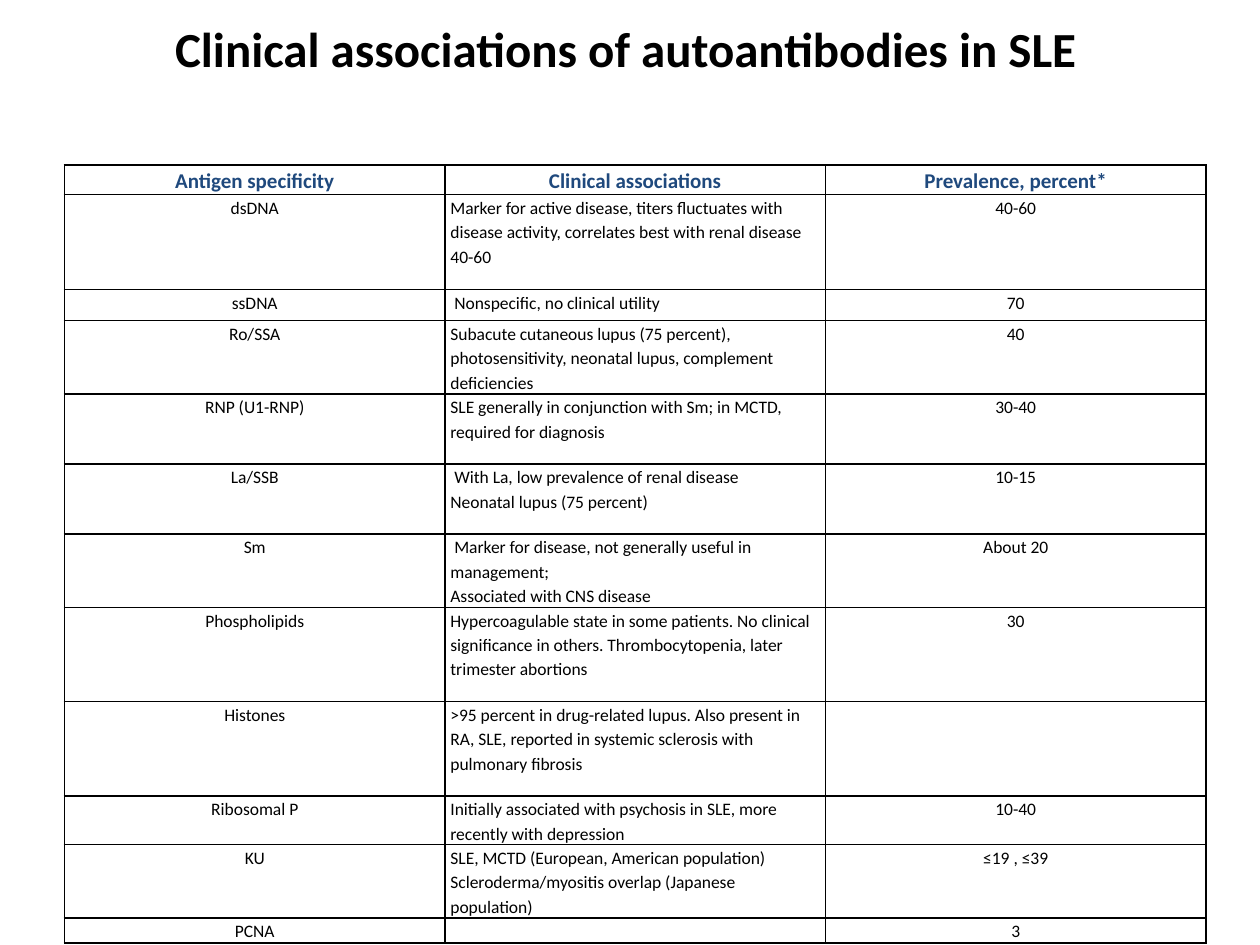
import pptx
import pptx.util
import pptx.dml.color
import pptx.enum.text
import pptx.oxml.ns
from lxml import etree

Cm, Pt = pptx.util.Cm, pptx.util.Pt
ALIGN = pptx.enum.text.PP_ALIGN
BLACK = pptx.dml.color.RGBColor(0x00, 0x00, 0x00)
NAVY = pptx.dml.color.RGBColor(0x1F, 0x49, 0x7D)
FONT = "Calibri"

# Content: row height in cm, then the three cells (one line per paragraph)
TITLE = "Clinical associations of autoantibodies in SLE"
ROWS = [
    (0.58, "Antigen specificity", "Clinical associations", "Prevalence, percent*"),
    (1.91, "dsDNA", "Marker for active disease, titers fluctuates with disease "
     "activity, correlates best with renal disease \t40-60", "40-60"),
    (0.63, "ssDNA", " Nonspecific, no clinical utility", "70"),
    (1.48, "Ro/SSA", "Subacute cutaneous lupus (75 percent), photosensitivity, "
     "neonatal lupus, complement deficiencies", "40"),
    (1.41, "RNP (U1-RNP)", "SLE generally in conjunction with Sm; in MCTD, "
     "required for diagnosis", "30-40"),
    (1.41, "La/SSB", " With La, low prevalence of renal disease\n"
     "Neonatal lupus (75 percent)", "10-15"),
    (1.48, "Sm", " Marker for disease, not generally useful in management;\n"
     "Associated with CNS disease", "About 20"),
    (1.9, "Phospholipids", "Hypercoagulable state in some patients. No clinical "
     "significance in others. Thrombocytopenia, later trimester abortions", "30"),
    (1.9, "Histones", ">95 percent in drug-related lupus. Also present in RA, SLE, "
     "reported in systemic sclerosis with pulmonary fibrosis", ""),
    (0.98, "Ribosomal P", "Initially associated with psychosis in SLE, more "
     "recently with depression", "10-40"),
    (1.48, "KU", "SLE, MCTD (European, American population) "
     "Scleroderma/myositis overlap (Japanese population)", "≤19 , ≤39"),
    (0.5, "PCNA", "", "3"),
]
COLS = 3
WIDE = 7.67


def add_run(para, text, size, color, bold):
    run = para.add_run()
    run.text = text
    font = run.font
    font.name, font.size, font.bold = FONT, Pt(size), bold
    font.color.rgb = color


def add_edges(cell):
    """Draw a thin black line on all four sides of a cell."""
    props = cell._tc.get_or_add_tcPr()
    for n, side in enumerate(("lnL", "lnR", "lnT", "lnB")):
        line = etree.Element(pptx.oxml.ns.qn("a:" + side), w=str(Pt(1)))
        fill = etree.SubElement(line, pptx.oxml.ns.qn("a:solidFill"))
        etree.SubElement(fill, pptx.oxml.ns.qn("a:srgbClr"), val=str(BLACK))
        props.insert(n, line)


def fill_cell(cell, text, head, align):
    cell.margin_left = cell.margin_right = Cm(0.11)
    cell.margin_top = cell.margin_bottom = 0
    cell.fill.background()
    add_edges(cell)
    frame = cell.text_frame
    for n, line in enumerate(text.split("\n")):
        para = frame.add_paragraph() if n else frame.paragraphs[0]
        para.alignment, para.line_spacing = align, 1.15
        if line:
            add_run(para, line, 12 if head else 10, NAVY if head else BLACK, head)
        else:  # keep a blank cell as low as its row
            etree.SubElement(para._p, pptx.oxml.ns.qn("a:endParaRPr"), sz="1000")


deck = pptx.Presentation()
deck.slide_width, deck.slide_height = Cm(25.4), Cm(19.05)
slide = deck.slides.add_slide(deck.slide_layouts[5])

# Title
title = slide.shapes.title
title.left, title.top, title.width, title.height = Cm(1.09), Cm(0), Cm(23.04), Cm(1.93)
title.text_frame.vertical_anchor = pptx.enum.text.MSO_ANCHOR.MIDDLE
para = title.text_frame.paragraphs[0]
para.alignment = ALIGN.CENTER
add_run(para, TITLE, 28, BLACK, True)

# Table
high = sum(row[0] for row in ROWS)
table = slide.shapes.add_table(len(ROWS), COLS, Cm(1.3), Cm(3.33),
                               Cm(WIDE * COLS), Cm(high)).table
table.horz_banding = False
for col in table.columns:
    col.width = Cm(WIDE)
for r, (tall, *texts) in enumerate(ROWS):
    table.rows[r].height = Cm(tall)
    for c, text in enumerate(texts):
        left = r > 0 and c == 1
        fill_cell(table.cell(r, c), text, r == 0, ALIGN.LEFT if left else ALIGN.CENTER)

deck.save("out.pptx")
